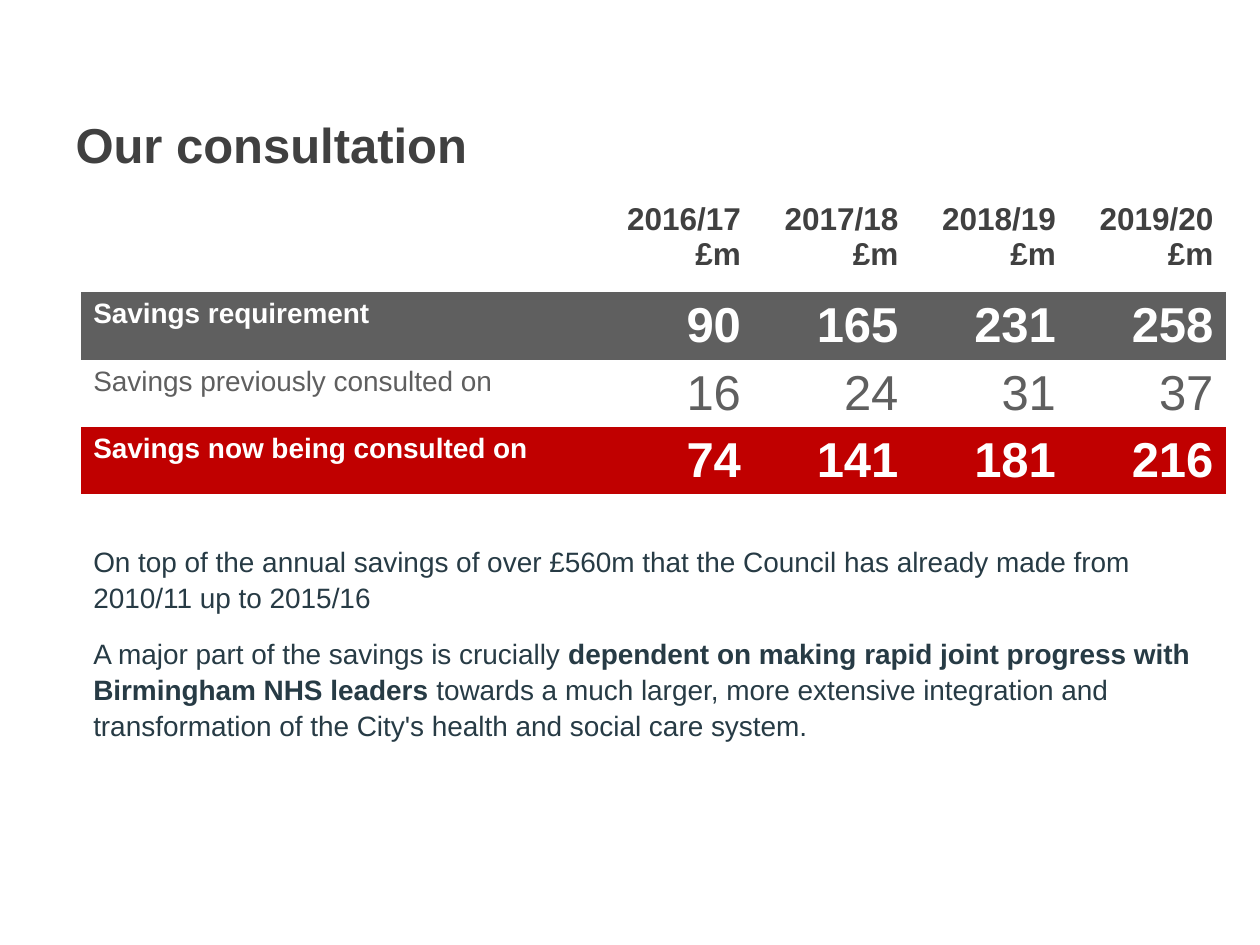
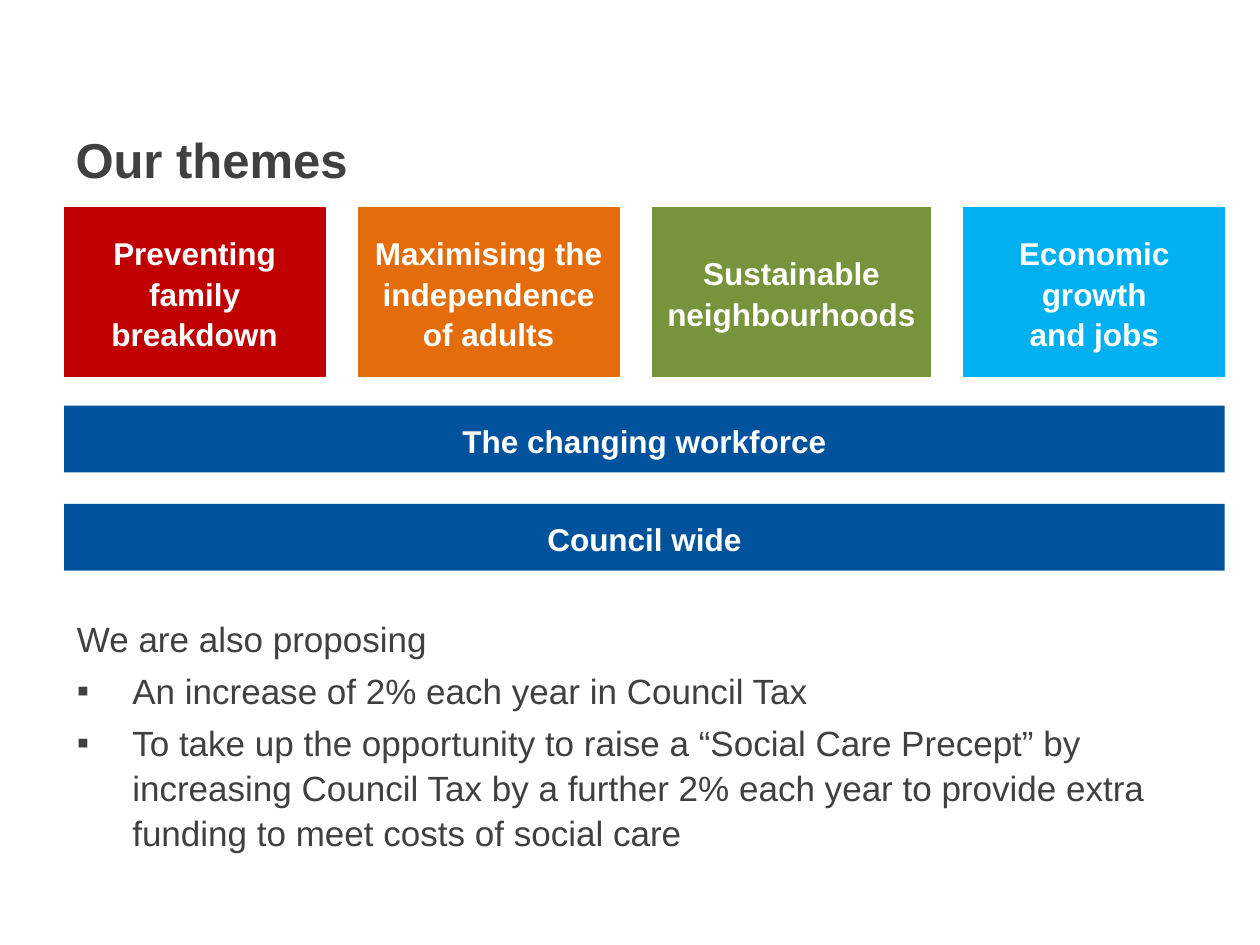
from lxml.etree import SubElement
from pptx import Presentation
from pptx.dml.color import RGBColor
from pptx.enum.shapes import MSO_SHAPE as Shape
from pptx.enum.text import MSO_ANCHOR as Anchor, MSO_AUTO_SIZE as AutoSize, PP_ALIGN as Align
from pptx.oxml.ns import qn
from pptx.util import Inches, Pt

COLOURS = {
    "white": "FFFFFF", "text": "404040", "slate": "273B45", "grey": "5F5F5F",
    "red": "C00000", "orange": "E46C0A", "green": "77933C", "sky": "00B0F0", "blue": "00529C",
}
FONT = "Arial"
PLAIN_TABLE = "{2D5ABB26-0587-4C30-8999-92F81FD0307C}"
LOOSE = 1.07


def colour(name):
    return RGBColor.from_string(COLOURS[name])


def set_bullet(paragraph, bullet, indent=0.44):
    props = paragraph._p.get_or_add_pPr()
    hang = Inches(indent) if bullet else 0
    props.set("marL", str(hang))
    props.set("indent", str(-hang))
    if bullet:
        SubElement(props, qn("a:buFont"), typeface=FONT)
        SubElement(props, qn("a:buChar"), char=bullet)
    else:
        SubElement(props, qn("a:buNone"))


def write(frame, paragraphs, size=18, ink="text", bold=False, align=Align.LEFT,
          before=0, after=0, spacing=1.0, bullets=""):
    """Fill a frame; ** toggles bold, a vertical tab breaks a line, bullets has one mark per paragraph."""
    frame.word_wrap = True
    for number, text in enumerate(paragraphs):
        paragraph = frame.add_paragraph() if number else frame.paragraphs[0]
        set_bullet(paragraph, bullets[number:number + 1].strip())
        paragraph.alignment = align
        paragraph.line_spacing = spacing
        paragraph.space_before = Pt(before if number else 0)
        paragraph.space_after = Pt(after)
        for part, words in enumerate(text.split("**")):
            for row, line in enumerate(words.split("\v")):
                if row:
                    paragraph.add_line_break()
                run = paragraph.add_run()
                run.text = line
                run.font.name = FONT
                run.font.size = Pt(size)
                run.font.bold = bold or part % 2 == 1
                run.font.color.rgb = colour(ink)


class Deck:
    def __init__(self):
        self.file = Presentation()
        self.file.slide_width, self.file.slide_height = Inches(10), Inches(7.5)
        self.slide = None

    def place(self, holder, left, top, width, height):
        holder.left, holder.top = Inches(left), Inches(top)
        holder.width, holder.height = Inches(width), Inches(height)
        holder.text_frame.auto_size = AutoSize.NONE

    def new_slide(self, title, top):
        self.slide = self.file.slides.add_slide(self.file.slide_layouts[1])
        heading = self.slide.shapes.title
        self.place(heading, 0.5, top, 9.23, 0.78)
        heading.text_frame.vertical_anchor = Anchor.MIDDLE
        write(heading.text_frame, [title], size=28, bold=True)

    def body(self, paragraphs, left, top, width, height, **style):
        holder = self.slide.placeholders[1]
        self.place(holder, left, top, width, height)
        write(holder.text_frame, paragraphs, spacing=LOOSE, **style)

    def block(self, paragraphs, fill, left, top, width, height, outlined=False):
        block = self.slide.shapes.add_shape(
            Shape.RECTANGLE, Inches(left), Inches(top), Inches(width), Inches(height))
        block.shadow.inherit = False
        block.fill.solid()
        block.fill.fore_color.rgb = colour(fill)
        if outlined:
            block.line.color.rgb = colour(fill)
            block.line.width = Pt(0.75)
        else:
            block.line.fill.background()
        block.text_frame.vertical_anchor = Anchor.MIDDLE
        write(block.text_frame, paragraphs, ink="white", bold=True,
              align=Align.CENTER, spacing=LOOSE)

    def table(self, years, rows, left, top, widths, heights):
        table = self.slide.shapes.add_table(
            len(heights), len(widths), Inches(left), Inches(top),
            Inches(sum(widths)), Inches(sum(heights))).table
        table.first_row = table.horz_banding = False
        table._tbl.tblPr.find(qn("a:tableStyleId")).text = PLAIN_TABLE
        for column, width in zip(table.columns, widths):
            column.width = Inches(width)
        for row, height in zip(table.rows, heights):
            row.height = Inches(height)
        for cell in table.iter_cells():
            cell.fill.background()
        for col, year in enumerate(years, 1):
            write(table.cell(0, col).text_frame, [year, "£m"], bold=True, align=Align.RIGHT)
        for row, (label, amounts, fill) in enumerate(rows, 1):
            ink = "white" if fill else "grey"
            for col, value in enumerate([label, *amounts]):
                cell = table.cell(row, col)
                if fill:
                    cell.fill.solid()
                    cell.fill.fore_color.rgb = colour(fill)
                write(cell.text_frame, [str(value)], size=28 if col else 16, ink=ink,
                      bold=bool(fill), align=Align.RIGHT if col else Align.LEFT)


def consultation(deck):
    deck.new_slide("Our consultation", 0.75)
    deck.body([
        "On top of the annual savings of over £560m that the Council has already made from "
        "2010/11 up to 2015/16",
        "A major part of the savings is crucially** dependent on making rapid joint progress with "
        "Birmingham NHS leaders **towards a much larger, more extensive integration and "
        "transformation of the City's health and social care system.",
    ], 0.64, 4.25, 9.08, 2.38, size=16, ink="slate", after=12)
    savings = [
        ("Savings requirement", [90, 165, 231, 258], "grey"),
        ("Savings previously consulted on", [16, 24, 31, 37], None),
        ("Savings now being consulted on", [74, 141, 181, 216], "red"),
    ]
    deck.table(["2016/17", "2017/18", "2018/19", "2019/20"], savings,
               0.64, 1.55, [4.09] + [1.25] * 4, [0.77] + [0.53] * 3)


def themes(deck):
    left, width = 0.51, 9.21
    deck.new_slide("Our themes", 0.87)
    tiles = [
        (["Preventing family breakdown"], "red", 2.07),
        (["Maximising the independence", "of adults"], "orange", 2.07),
        (["Sustainable neighbourhoods"], "green", 2.21),
        (["Economic", "growth\vand jobs"], "sky", 2.07),
    ]
    gap = (width - sum(tile[2] for tile in tiles)) / (len(tiles) - 1)
    tile_left = left
    for theme, fill, tile_width in tiles:
        deck.block(theme, fill, tile_left, 1.65, tile_width, 1.34, outlined=True)
        tile_left += tile_width + gap
    for number, theme in enumerate(["The changing workforce", "Council wide"]):
        deck.block([theme], "blue", left, 3.22 + 0.78 * number, width, 0.53)
    deck.body([
        "We are also proposing",
        "An increase of 2% each year in Council Tax",
        "To take up the opportunity to raise a “Social Care Precept” by increasing Council Tax "
        "by a further 2% each year to provide extra funding to meet costs of social care",
    ], left, 4.83, width, 1.52, size=20, before=4, bullets=" ▪▪")


def main():
    deck = Deck()
    consultation(deck)
    themes(deck)
    deck.file.save("out.pptx")


if __name__ == "__main__":
    main()
